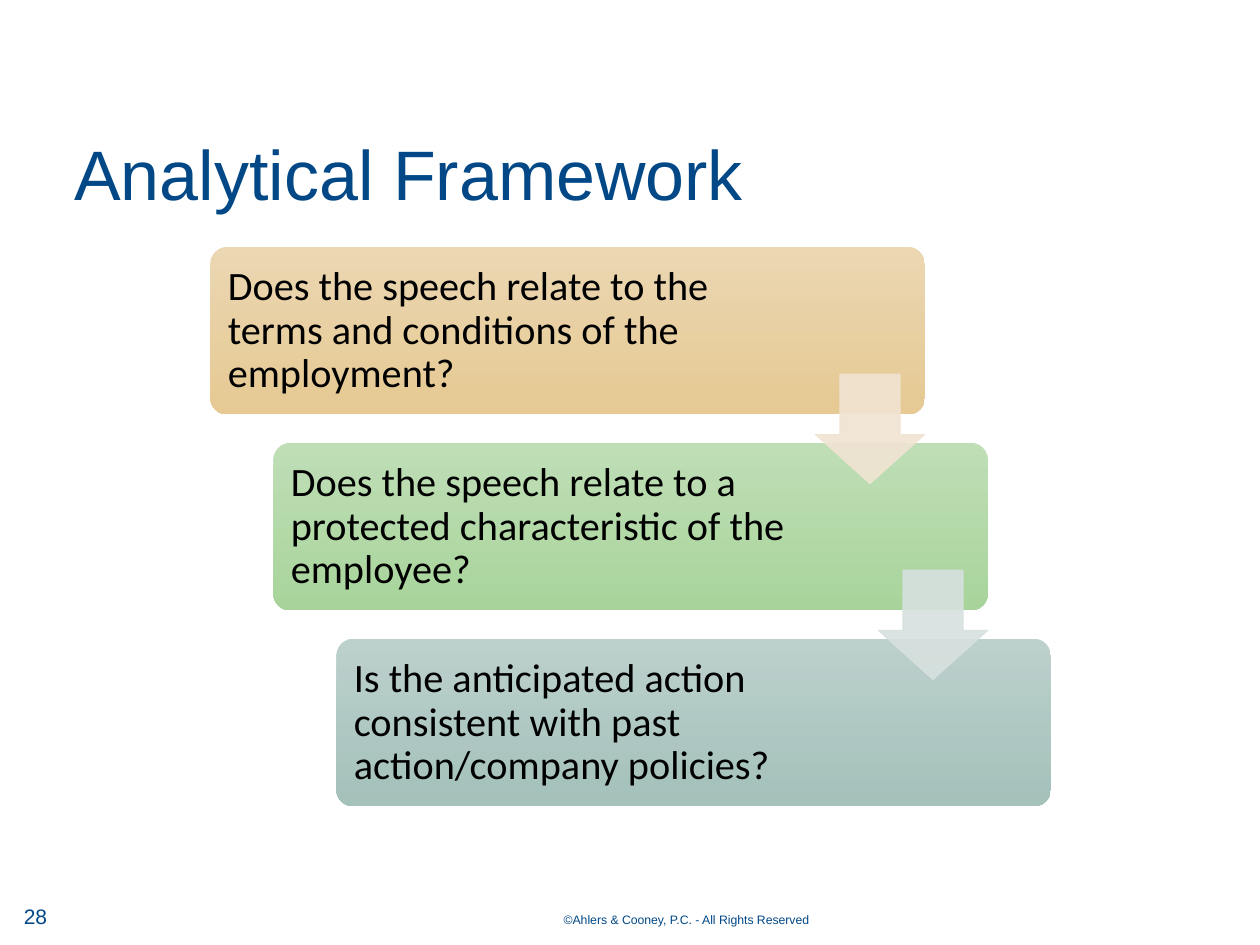
from lxml.etree import SubElement
from pptx import Presentation
from pptx.dml.color import RGBColor
from pptx.enum.shapes import MSO_SHAPE
from pptx.enum.text import MSO_ANCHOR, MSO_AUTO_SIZE, PP_ALIGN
from pptx.oxml.ns import qn
from pptx.util import Inches, Pt

NAVY = "024886"
STEP_WIDTH, STEP_HEIGHT = 5.67, 1.33
STEP_SHIFT, STEP_PITCH = 0.5, 1.555
ARROW_SIZE = 0.87
STEPS = [
    ("Does the speech relate to the terms and conditions of the employment?", "EBD7B2", "E6C993"),
    ("Does the speech relate to a protected characteristic of the employee?", "BFDEB6", "A8D49B"),
    ("Is the anticipated action consistent with past action/company policies?", "BCD0CC", "A4C1BA"),
]
ARROW_COLORS = ["F0E4D2", "D7E1DF"]


def rgb(value):
    """Turn a hex string into a colour."""
    return RGBColor.from_string(value)


def inches(*lengths):
    """Turn numbers into lengths in inches."""
    return [Inches(length) for length in lengths]


def write(holder, text, size, color=NAVY, font="Arial", align=PP_ALIGN.LEFT,
          anchor=MSO_ANCHOR.MIDDLE, spacing=1.0, inset=0.05):
    """Write one formatted paragraph into a shape."""
    frame = holder.text_frame
    frame.text = text
    frame.word_wrap = True
    frame.auto_size = MSO_AUTO_SIZE.NONE
    frame.vertical_anchor = anchor
    frame.margin_left = frame.margin_right = Inches(0.1)
    frame.margin_top = frame.margin_bottom = Inches(inset)
    paragraph = frame.paragraphs[0]
    paragraph.alignment = align
    paragraph.line_spacing = spacing
    paragraph.font.size = Pt(size)
    paragraph.font.name = font
    paragraph.font.color.rgb = rgb(color)


def add_title(slide, left, top, width, height):
    """Place the heading in the title placeholder."""
    title = slide.shapes.title
    title.left, title.top, title.width, title.height = inches(left, top, width, height)
    write(title, "Analytical Framework", 40, spacing=0.9)


def add_footer(slide, left, top):
    """Place the slide number and the copyright line."""
    number = slide.shapes.add_textbox(*inches(left, top, 2.25, 0.4))
    write(number, "28", 12)
    rights = slide.shapes.add_textbox(*inches(left + 3.78, top + 0.12, 2.65, 0.3))
    write(rights, "©Ahlers & Cooney, P.C. - All Rights Reserved", 7,
          align=PP_ALIGN.RIGHT, anchor=MSO_ANCHOR.TOP)


def add_step(slide, left, top, question, light, dark):
    """Draw one rounded step with its question."""
    card = slide.shapes.add_shape(MSO_SHAPE.ROUNDED_RECTANGLE,
                                  *inches(left, top, STEP_WIDTH, STEP_HEIGHT))
    card.shadow.inherit = False
    card.adjustments[0] = 0.1
    card.line.fill.background()
    card.fill.gradient()
    card.fill.gradient_angle = 270
    for stop, color in zip(card.fill.gradient_stops, (light, dark)):
        stop.color.rgb = rgb(color)
    label = slide.shapes.add_textbox(*inches(left + 0.04, top + 0.04, 4.22, 1.26))
    write(label, question, 23, color="000000", font="Calibri", spacing=0.9, inset=0.1)


def add_arrow(slide, left, top, color):
    """Draw one translucent arrow that leads to the next step."""
    arrow = slide.shapes.add_shape(MSO_SHAPE.DOWN_ARROW,
                                   *inches(left, top, ARROW_SIZE, ARROW_SIZE))
    arrow.shadow.inherit = False
    arrow.adjustments[0], arrow.adjustments[1] = 0.55, 0.45
    arrow.fill.solid()
    arrow.fill.fore_color.rgb = rgb(color)
    arrow.line.color.rgb = rgb(color)
    arrow.line.width = Pt(0.5)
    for tint in arrow.element.spPr.iter(qn("a:srgbClr")):
        SubElement(tint, qn("a:alpha"), val="90000")


def add_staircase(slide, left, top):
    """Place the descending steps, then the arrows over them."""
    for index, step in enumerate(STEPS):
        add_step(slide, left + index * STEP_SHIFT, top + index * STEP_PITCH, *step)
    for index, color in enumerate(ARROW_COLORS):
        add_arrow(slide, left + STEP_WIDTH - ARROW_SIZE + index * STEP_SHIFT,
                  top + 1.01 + index * STEP_PITCH, color)


def main():
    """Build and save the slide."""
    deck = Presentation()
    deck.slide_width, deck.slide_height = inches(10, 7.5)
    slide = deck.slides.add_slide(deck.slide_layouts[5])
    add_footer(slide, 0.09, 7.07)
    add_title(slide, 0.49, 0.86, 9.24, 1.1)
    add_staircase(slide, 1.67, 1.96)
    deck.save("out.pptx")


if __name__ == "__main__":
    main()
